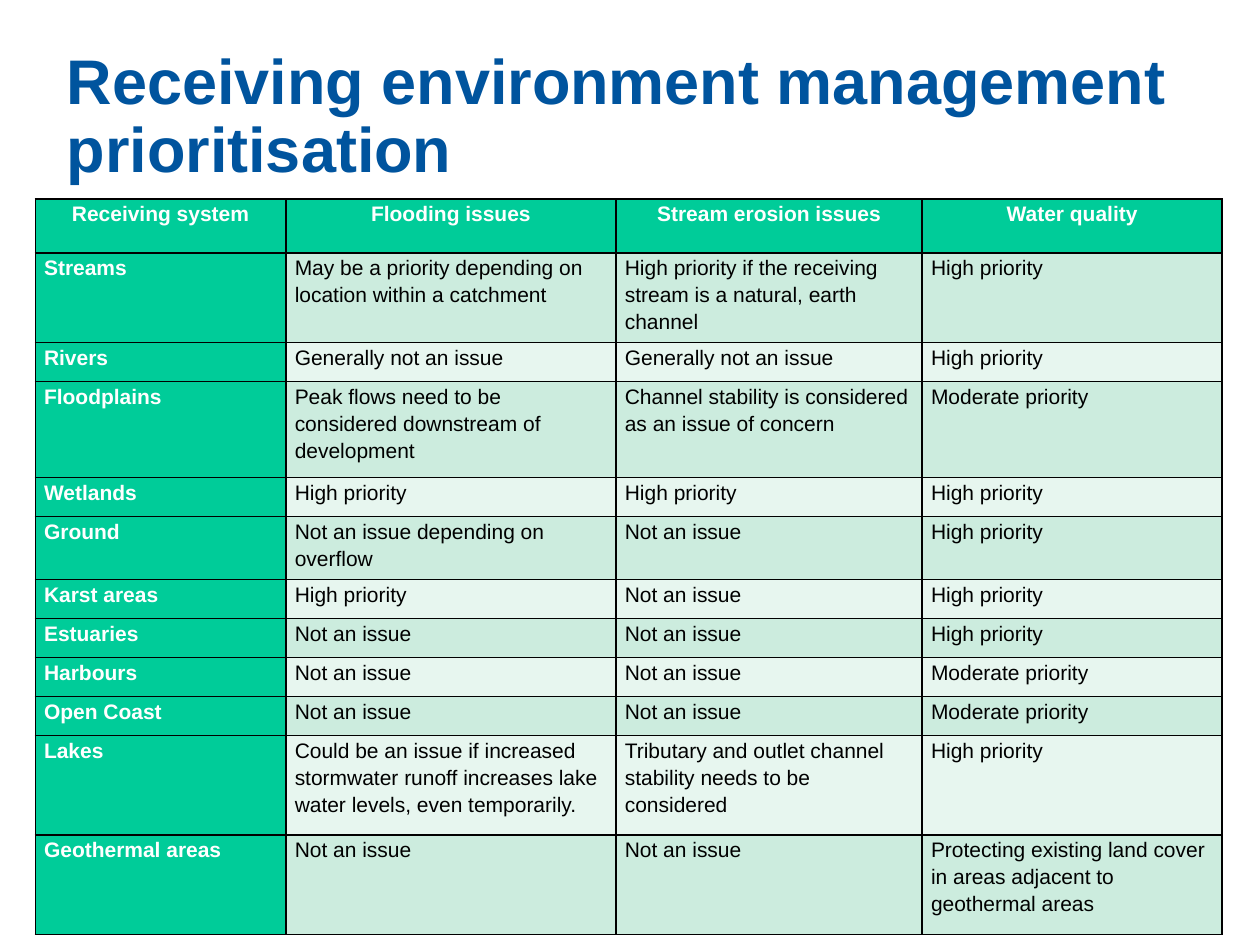
from dataclasses import dataclass

from lxml.etree import SubElement
from pptx import Presentation
from pptx.dml.color import RGBColor
from pptx.enum.text import MSO_ANCHOR, PP_ALIGN
from pptx.oxml.ns import qn
from pptx.util import Inches, Pt

TITLE = "Receiving environment management prioritisation"
HEADER = ("Receiving system", "Flooding issues", "Stream erosion issues", "Water quality")
HIGH, MODERATE, NONE = "High priority", "Moderate priority", "Not an issue"
GENERAL = "Generally not an issue"
SYSTEMS = [
    ("Streams", "May be a priority depending on location within a catchment",
     "High priority if the receiving stream is a natural, earth channel", HIGH),
    ("Rivers", GENERAL, GENERAL, HIGH),
    ("Floodplains", "Peak flows need to be considered downstream of development",
     "Channel stability is considered as an issue of concern", MODERATE),
    ("Wetlands", HIGH, HIGH, HIGH),
    ("Ground", "Not an issue depending on overflow", NONE, HIGH),
    ("Karst areas", HIGH, NONE, HIGH),
    ("Estuaries", NONE, NONE, HIGH),
    ("Harbours", NONE, NONE, MODERATE),
    ("Open Coast", NONE, NONE, MODERATE),
    ("Lakes",
     "Could be an issue if increased stormwater runoff increases lake water levels, even temporarily.",
     "Tributary and outlet channel stability needs to be considered", HIGH),
    ("Geothermal areas", NONE, NONE,
     "Protecting existing land cover in areas adjacent to geothermal areas"),
]
COL_WIDTHS = (1.99, 2.62, 2.43, 2.38)
ROW_HEIGHTS = (0.43, 0.71, 0.31, 0.76, 0.31, 0.5, 0.31, 0.31, 0.31, 0.31, 0.79, 0.79)


@dataclass(frozen=True)
class Theme:
    font: str = "Arial"
    title: str = "00549E"
    accent: str = "00CC99"
    bands: tuple = ("CCECDE", "E7F6EF")
    light: str = "FFFFFF"
    dark: str = "000000"
    title_size: int = 36
    cell_size: int = 12
    border: int = 1


THEME = Theme()


def style_runs(p, size, color, bold):
    for r in p.runs:
        r.font.name = THEME.font
        r.font.size = Pt(size)
        r.font.bold = bold
        r.font.color.rgb = RGBColor.from_string(color)


def add_borders(cell):
    tcPr = cell._tc.get_or_add_tcPr()
    for i, side in enumerate(("lnL", "lnR", "lnT", "lnB")):
        ln = tcPr.makeelement(qn(f"a:{side}"), {"w": str(Pt(THEME.border))})
        fill = SubElement(ln, qn("a:solidFill"))
        SubElement(fill, qn("a:srgbClr"), val=THEME.dark)
        tcPr.insert(i, ln)


def fill_cell(cell, text, row, col):
    strong = row == 0 or col == 0
    cell.fill.solid()
    fill = THEME.accent if strong else THEME.bands[(row - 1) % 2]
    cell.fill.fore_color.rgb = RGBColor.from_string(fill)
    cell.margin_left = cell.margin_right = Inches(0.07)
    cell.margin_top = cell.margin_bottom = 0
    cell.vertical_anchor = MSO_ANCHOR.TOP
    p = cell.text_frame.paragraphs[0]
    p.text = text
    p.alignment = PP_ALIGN.CENTER if row == 0 else PP_ALIGN.LEFT
    p.line_spacing = 1.15
    p.space_before = Pt(0)
    p.space_after = Pt(2)
    style_runs(p, THEME.cell_size, THEME.light if strong else THEME.dark, strong)
    add_borders(cell)


def add_title(s):
    sp = s.shapes.title
    sp.left, sp.top, sp.width, sp.height = map(Inches, (0.43, 0.31, 9.26, 1.25))
    tf = sp.text_frame
    tf.text = TITLE
    tf.word_wrap = True
    tf.vertical_anchor = MSO_ANCHOR.MIDDLE
    p = tf.paragraphs[0]
    p.alignment = PP_ALIGN.LEFT
    p.line_spacing = 0.9
    p.space_before = Pt(0)
    p.space_after = Pt(6)
    style_runs(p, THEME.title_size, THEME.title, True)


def add_priorities(s):
    rows = [HEADER, *SYSTEMS]
    table = s.shapes.add_table(
        len(rows), len(HEADER), Inches(0.28), Inches(1.58),
        Inches(sum(COL_WIDTHS)), Inches(sum(ROW_HEIGHTS))).table
    for column, width in zip(table.columns, COL_WIDTHS):
        column.width = Inches(width)
    for row, height in zip(table.rows, ROW_HEIGHTS):
        row.height = Inches(height)
    for i, texts in enumerate(rows):
        for j, text in enumerate(texts):
            fill_cell(table.cell(i, j), text, i, j)


def main():
    prs = Presentation()
    prs.slide_width, prs.slide_height = Inches(10), Inches(7.5)
    s = prs.slides.add_slide(prs.slide_layouts[5])
    add_title(s)
    add_priorities(s)
    prs.save("out.pptx")


if __name__ == "__main__":
    main()
